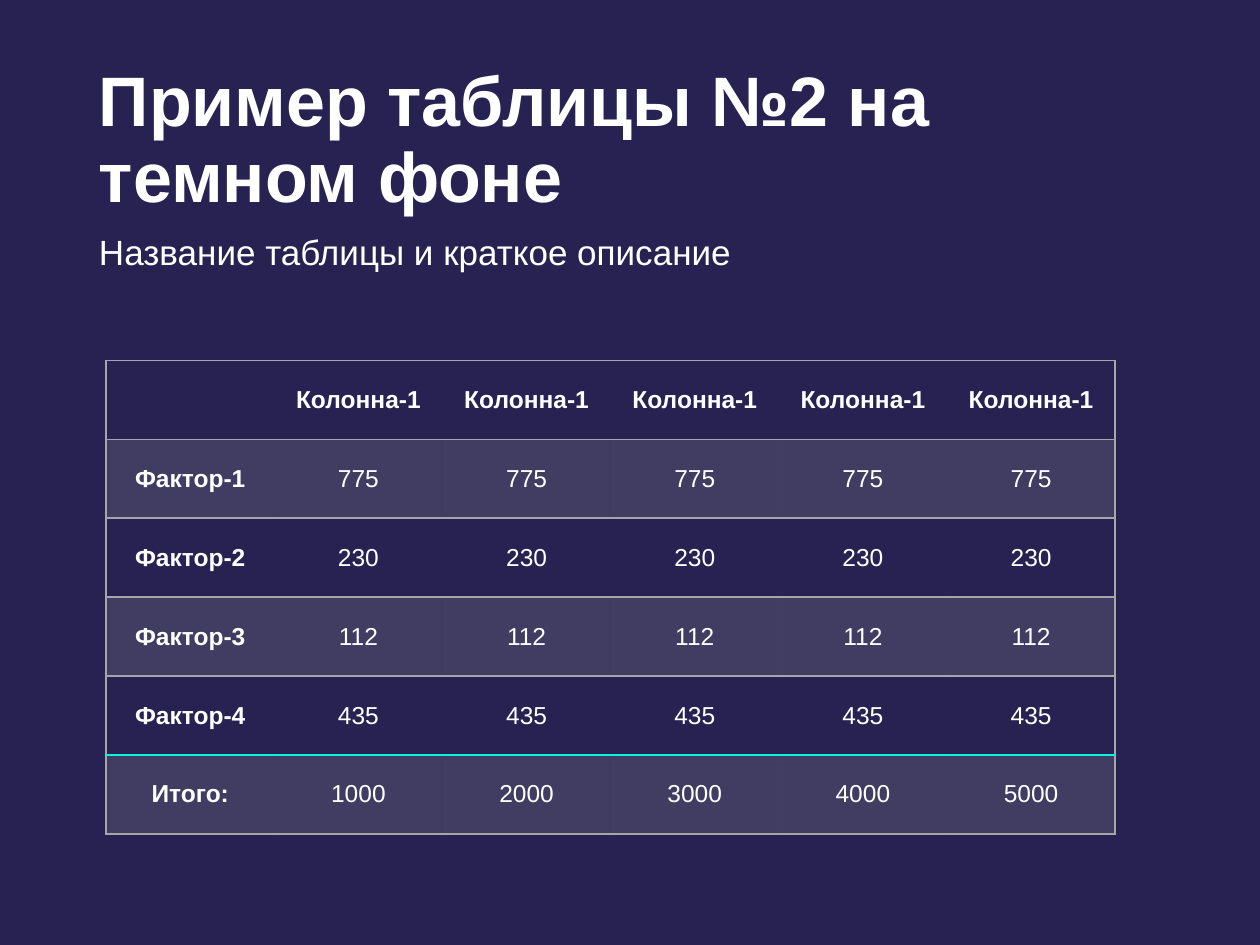
import dataclasses

import lxml.etree
import pptx
import pptx.dml.color
import pptx.enum.text
import pptx.oxml.ns
import pptx.util

Pt = pptx.util.Pt
RGBColor = pptx.dml.color.RGBColor
MIDDLE = pptx.enum.text.MSO_ANCHOR.MIDDLE
TOP = pptx.enum.text.MSO_ANCHOR.TOP
CENTER = pptx.enum.text.PP_ALIGN.CENTER


@dataclasses.dataclass(frozen=True)
class Theme:
    font: str = "Arial"
    background: str = "282252"
    text: str = "FFFFFF"
    band: str = "A5A5A5"
    band_opacity: int = 20
    rule: str = "A6A6A6"
    total_rule: str = "0BF0E1"
    title_size: int = 40
    subtitle_size: int = 20
    table_size: int = 14


THEME = Theme()
COLUMN_COUNT = 5
COLUMN_WIDTH = 96.1
ROW_HEIGHT = 45.1
ROWS = [
    [""] + ["Колонна-1"] * COLUMN_COUNT,
    ["Фактор-1"] + ["775"] * COLUMN_COUNT,
    ["Фактор-2"] + ["230"] * COLUMN_COUNT,
    ["Фактор-3"] + ["112"] * COLUMN_COUNT,
    ["Фактор-4"] + ["435"] * COLUMN_COUNT,
    ["Итого:"] + [str(1000 * n) for n in range(1, COLUMN_COUNT + 1)],
]


def style_font(paragraph, size, bold=False):
    font = paragraph.font
    font.name = THEME.font
    font.size = Pt(size)
    font.bold = bold
    font.color.rgb = RGBColor.from_string(THEME.text)


def add_text(slide, text, left, top, width, height, size, anchor, bold=False):
    frame = slide.shapes.add_textbox(Pt(left), Pt(top), Pt(width), Pt(height)).text_frame
    frame.word_wrap = True
    frame.vertical_anchor = anchor
    paragraph = frame.paragraphs[0]
    paragraph.text = text
    style_font(paragraph, size, bold)
    return paragraph


def add_xml(parent, tag, **attributes):
    return lxml.etree.SubElement(parent, pptx.oxml.ns.qn(tag), attributes)


def set_border(cell, side, color):
    """Draw one side (L, R, T or B) of a cell; no color means no line."""
    properties = cell._tc.get_or_add_tcPr()
    line = add_xml(properties, f"a:ln{side}", w=str(Pt(1)))
    if color is None:
        add_xml(line, "a:noFill")
    else:
        add_xml(add_xml(line, "a:solidFill"), "a:srgbClr", val=color)


def fill_band(cell):
    cell.fill.solid()
    cell.fill.fore_color.rgb = RGBColor.from_string(THEME.band)
    color = cell._tc.tcPr.find(".//" + pptx.oxml.ns.qn("a:solidFill") + "[last()]/..")
    color = cell._tc.tcPr.find(pptx.oxml.ns.qn("a:solidFill"))[0]
    add_xml(color, "a:alpha", val=str(THEME.band_opacity * 1000))


def format_cell(cell, text, row, column):
    last_row = len(ROWS) - 1
    cell.vertical_anchor = MIDDLE
    paragraph = cell.text_frame.paragraphs[0]
    paragraph.text = text
    paragraph.alignment = CENTER
    style_font(paragraph, THEME.table_size, bold=row == 0 or column == 0)

    set_border(cell, "L", THEME.rule if column == 0 else None)
    set_border(cell, "R", THEME.rule if column == COLUMN_COUNT else None)
    set_border(cell, "T", THEME.total_rule if row == last_row else THEME.rule)
    set_border(cell, "B", THEME.total_rule if row == last_row - 1 else THEME.rule)
    if row % 2:
        fill_band(cell)
    else:
        cell.fill.background()


def add_data_table(slide, left, top):
    columns = COLUMN_COUNT + 1
    table = slide.shapes.add_table(
        len(ROWS), columns, Pt(left), Pt(top),
        Pt(columns * COLUMN_WIDTH), Pt(len(ROWS) * ROW_HEIGHT),
    ).table
    table.first_row = table.horz_banding = False
    for column in table.columns:
        column.width = Pt(COLUMN_WIDTH)
    for row, values in enumerate(ROWS):
        table.rows[row].height = Pt(ROW_HEIGHT)
        for column, text in enumerate(values):
            format_cell(table.cell(row, column), text, row, column)


def main():
    presentation = pptx.Presentation()
    presentation.slide_width, presentation.slide_height = Pt(720), Pt(540)
    slide = presentation.slides.add_slide(presentation.slide_layouts[6])
    slide.background.fill.solid()
    slide.background.fill.fore_color.rgb = RGBColor.from_string(THEME.background)

    title = add_text(slide, "Пример таблицы №2 на\vтемном фоне",
                     49.5, 28.8, 621, 104.4, THEME.title_size, MIDDLE, bold=True)
    title.line_spacing = 0.9
    add_text(slide, "Название таблицы и краткое описание",
             49.5, 128.3, 590, 31.5, THEME.subtitle_size, TOP)
    add_data_table(slide, 60.7, 205.9)
    presentation.save("out.pptx")


if __name__ == "__main__":
    main()
